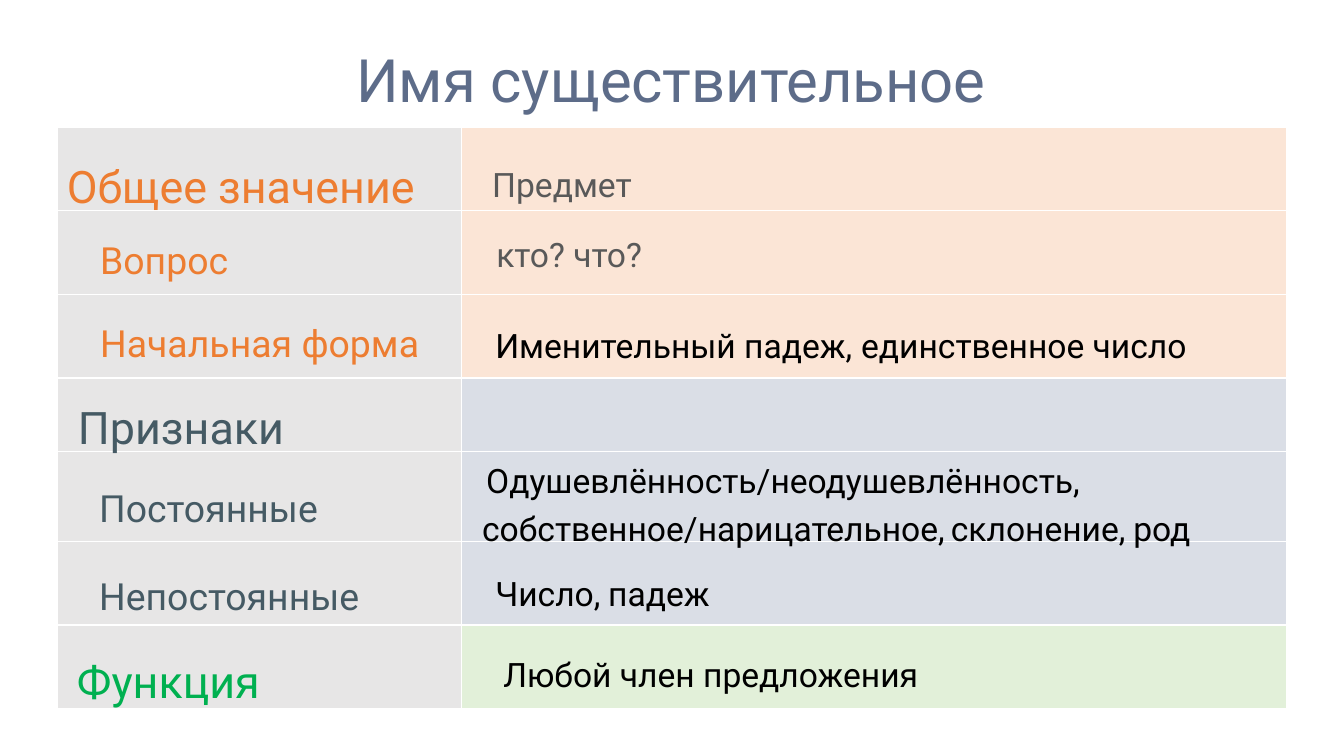
"""Build the slide on the noun: a colour-banded table with labels and answers."""
from pptx import Presentation
from pptx.dml.color import RGBColor
from pptx.enum.text import MSO_ANCHOR, MSO_AUTO_SIZE, PP_ALIGN
from pptx.util import Pt

MIDDLE, BOTTOM = MSO_ANCHOR.MIDDLE, MSO_ANCHOR.BOTTOM
LEFT, CENTER = PP_ALIGN.LEFT, PP_ALIGN.CENTER
NO_AUTOFIT = MSO_AUTO_SIZE.NONE
TITLE_ONLY = 5
FONT = "Roboto"
LINE_HEIGHT = 52.6
COLORS = {
    "title": "5D6C89", "orange": "ED7D31", "slate": "455A64", "green": "00B050",
    "gray": "595959", "black": "000000", "label_fill": "E7E6E6",
    "meaning_fill": "FBE5D6", "feature_fill": "DADEE6", "function_fill": "E2F0D9",
}


def write(shape, text, size, color, align=LEFT, anchor=MIDDLE, spacing=1.5):
    frame = shape.text_frame
    frame.word_wrap = True
    frame.auto_size = NO_AUTOFIT
    frame.vertical_anchor = anchor
    frame.margin_left = frame.margin_right = Pt(9.6)
    frame.margin_top = frame.margin_bottom = Pt(4.8)
    frame.text = text
    paragraph = frame.paragraphs[0]
    paragraph.alignment = align
    paragraph.line_spacing = spacing
    paragraph.space_before = Pt(0)
    font = paragraph.runs[0].font
    font.name = FONT
    font.size = Pt(size)
    font.color.rgb = RGBColor.from_string(COLORS[color])


deck = Presentation()
deck.slide_width, deck.slide_height = Pt(960), Pt(540)
slide = deck.slides.add_slide(deck.slide_layouts[TITLE_ONLY])

title = slide.shapes.title
title.left, title.top, title.width, title.height = Pt(100.8), Pt(33.8), Pt(757.4), Pt(LINE_HEIGHT)
write(title, "Имя существительное", size=42.7, color="title",
      align=CENTER, anchor=BOTTOM, spacing=1.0)

row_heights = [59.7, 59.7, 59.7, 52.6, 64.1, 59.7, 59.7]
answer_fills = ["meaning_fill"] * 3 + ["feature_fill"] * 3 + ["function_fill"]
column_widths = [288.7, 589]
grid = slide.shapes.add_table(len(row_heights), len(column_widths), Pt(41), Pt(90.9),
                              Pt(sum(column_widths)), Pt(sum(row_heights))).table
grid.first_row = False
grid.horz_banding = False
for column, width in zip(grid.columns, column_widths):
    column.width = Pt(width)
for row, height, answer_fill in zip(grid.rows, row_heights, answer_fills):
    row.height = Pt(height)
    for cell, fill in zip(row.cells, ("label_fill", answer_fill)):
        cell.fill.solid()
        cell.fill.fore_color.rgb = RGBColor.from_string(COLORS[fill])

headings = [
    ("Общее значение", 38.2, 96.5, 505, "orange"),
    ("Признаки", 46.1, 268.6, 500, "slate"),
    ("Функция", 45.4, 450, 268, "green"),
]
subheadings = [
    ("Вопрос", 61.9, 151.2, 144, "orange"),
    ("Начальная форма", 61.9, 210.2, 261, "orange"),
    ("Постоянные", 61.2, 328.3, 250, "slate"),
    ("Непостоянные", 61.2, 391, 250, "slate"),
]
answers = [
    ("Именительный падеж,", 344.2, 213.1, 297, "black"),
    ("единственное число", 605.5, 213.1, 273, "black"),
    ("Одушевлённость/неодушевлённость,", 337.7, 309.6, 457, "black"),
    ("собственное/нарицательное,", 334.8, 343.4, 457, "black"),
    ("склонение,", 669.6, 343.4, 156, "black"),
    ("род", 799.9, 343.4, 156, "black"),
    ("Число,", 344.2, 390.2, 100, "black"),
    ("падеж", 424.8, 390.2, 120, "black"),
    ("Предмет", 342, 97.9, 297, "gray"),
    ("кто? что?", 344.9, 148.3, 297, "gray"),
    ("Любой член предложения", 349.9, 447.8, 371, "black"),
]
for size, lines in ((32, headings), (26.7, subheadings), (24, answers)):
    for text, left, top, width, color in lines:
        line = slide.shapes.add_textbox(Pt(left), Pt(top), Pt(width), Pt(LINE_HEIGHT))
        write(line, text, size=size, color=color)

deck.save("out.pptx")
